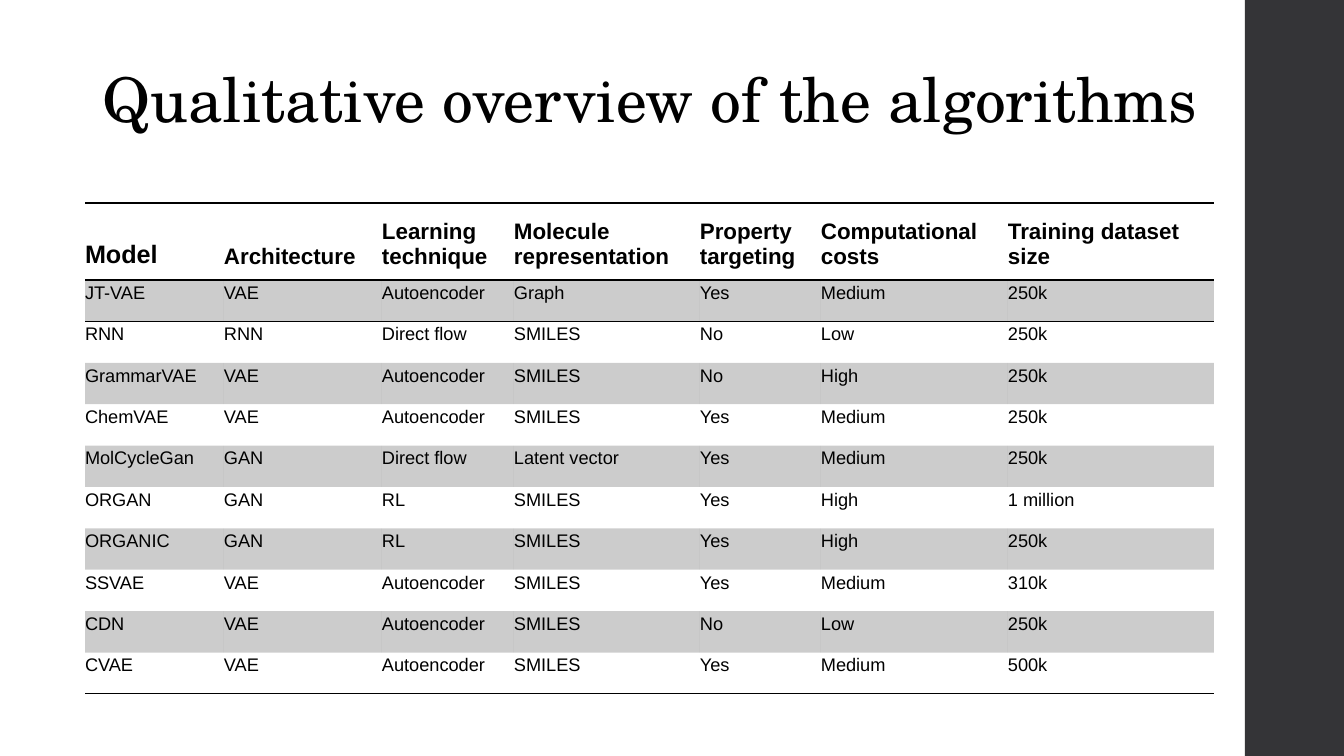
from lxml import etree
from pptx import Presentation
from pptx.dml.color import RGBColor
from pptx.enum.shapes import MSO_SHAPE
from pptx.enum.text import MSO_ANCHOR
from pptx.oxml.ns import qn
from pptx.util import Emu, Pt

RECTANGLE = MSO_SHAPE.RECTANGLE
TOP, MIDDLE, BOTTOM = MSO_ANCHOR.TOP, MSO_ANCHOR.MIDDLE, MSO_ANCHOR.BOTTOM
PLAIN_TABLE_STYLE = "{2D5ABB26-0587-4C30-8999-92F81FD0307C}"
BLACK, CHARCOAL = "000000", "343437"

COLUMN_WIDTHS = [139, 158, 132, 186, 121, 187, 206]
HEADER_HEIGHT, BODY_HEIGHT = 77, 414
HEADINGS = ["Model", "Architecture", "Learning technique", "Molecule representation",
            "Property targeting", "Computational costs", "Training dataset size"]
MODELS = [
    ["JT-VAE", "VAE", "Autoencoder", "Graph", "Yes", "Medium", "250k"],
    ["RNN", "RNN", "Direct flow", "SMILES", "No", "Low", "250k"],
    ["GrammarVAE", "VAE", "Autoencoder", "SMILES", "No", "High", "250k"],
    ["ChemVAE", "VAE", "Autoencoder", "SMILES", "Yes", "Medium", "250k"],
    ["MolCycleGan", "GAN", "Direct flow", "Latent vector", "Yes", "Medium", "250k"],
    ["ORGAN", "GAN", "RL", "SMILES", "Yes", "High", "1 million"],
    ["ORGANIC", "GAN", "RL", "SMILES", "Yes", "High", "250k"],
    ["SSVAE", "VAE", "Autoencoder", "SMILES", "Yes", "Medium", "310k"],
    ["CDN", "VAE", "Autoencoder", "SMILES", "No", "Low", "250k"],
    ["CVAE", "VAE", "Autoencoder", "SMILES", "Yes", "Medium", "500k"],
]


def px(length):
    """Turn pixels, 100.8 to the inch, into EMU."""
    return Emu(round(length * 914400 / 100.8))


def color(value):
    return RGBColor.from_string(value)


class SlideBuilder:
    title_font = "TeX Gyre Schola"
    body_font = "Arial"

    def __init__(self, page):
        self.page = page

    def bar(self, left, top, width, height, fill):
        shape = self.page.shapes.add_shape(RECTANGLE, px(left), px(top), px(width), px(height))
        shape.shadow.inherit = False
        shape.fill.solid()
        shape.fill.fore_color.rgb = color(fill)
        shape.line.fill.background()

    def span(self, para, text, size, font, bold=False):
        span = para.add_run()
        span.text = text
        span.font.size = Pt(size)
        span.font.name = font
        span.font.bold = bold
        span.font.color.rgb = color(BLACK)

    def title(self, text, left, top, width, height):
        box = self.page.shapes.add_textbox(px(left), px(top), px(width), px(height))
        frame = box.text_frame
        frame.word_wrap = True
        frame.vertical_anchor = MIDDLE
        para = frame.paragraphs[0]
        para.line_spacing = 0.9
        self.span(para, text, 44, self.title_font)

    def table(self, left, top, widths, headings, records):
        frame = self.page.shapes.add_table(
            len(records) + 1, len(widths), px(left), px(top),
            px(sum(widths)), px(HEADER_HEIGHT + BODY_HEIGHT))
        frame._element.find(".//" + qn("a:tableStyleId")).text = PLAIN_TABLE_STYLE
        table = frame.table
        for column, width in zip(table.columns, widths):
            column.width = px(width)
        for row in table.rows:
            row.height = px(BODY_HEIGHT / len(records))
        table.rows[0].height = px(HEADER_HEIGHT)

        for index, heading in enumerate(headings):
            cell = table.cell(0, index)
            self.cell(cell, heading, 16 if index else 18, BOTTOM, bold=True)
            self.borders(cell, "lnT", "lnB")
        for number, record in enumerate(records, 1):
            for index, text in enumerate(record):
                cell = table.cell(number, index)
                self.cell(cell, text, 13, TOP)
                if number % 2:
                    self.shade(cell)
                if number == 1:
                    self.borders(cell, "lnT")
                if number == len(records):
                    self.borders(cell, "lnB")

    def cell(self, cell, text, size, anchor, bold=False):
        cell.margin_left, cell.margin_top = px(0), px(3)
        cell.margin_right, cell.margin_bottom = px(5), px(11)
        cell.vertical_anchor = anchor
        cell.fill.background()
        self.span(cell.text_frame.paragraphs[0], text, size, self.body_font, bold)

    def shade(self, cell):
        """Fill a cell with black at 20 % opacity."""
        cell.fill.solid()
        cell.fill.fore_color.rgb = color(BLACK)
        tint = cell._tc.tcPr.find(".//" + qn("a:srgbClr"))
        etree.SubElement(tint, qn("a:alpha"), val="20000")

    def borders(self, cell, *sides):
        """Draw 1 pt lines on the sides, given in schema order, ahead of the fill."""
        for place, side in enumerate(sides):
            line = etree.Element(qn("a:" + side), w=str(Pt(1)))
            fill = etree.SubElement(line, qn("a:solidFill"))
            etree.SubElement(fill, qn("a:srgbClr"), val=BLACK)
            cell._tc.tcPr.insert(place, line)


def main():
    deck = Presentation()
    deck.slide_width, deck.slide_height = px(1344), px(756)
    builder = SlideBuilder(deck.slides.add_slide(deck.slide_layouts[6]))
    builder.bar(1245, 0, 99, 756, CHARCOAL)
    builder.title("Qualitative overview of the algorithms", 93, 20, 1159, 166)
    builder.table(85, 203, COLUMN_WIDTHS, HEADINGS, MODELS)
    deck.save("out.pptx")


if __name__ == "__main__":
    main()
